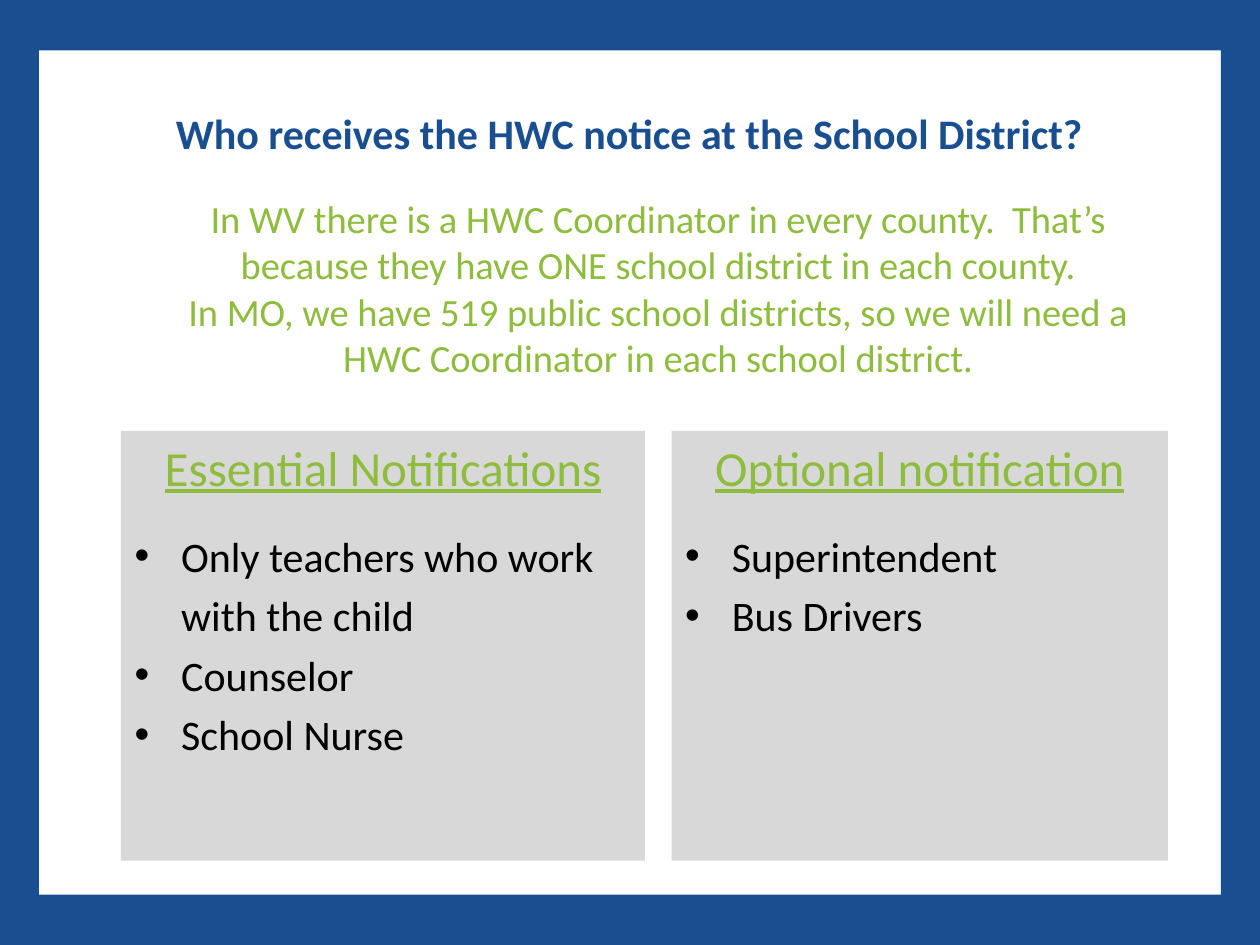
from lxml import etree
from pptx import Presentation
from pptx.dml.color import RGBColor
from pptx.enum.shapes import MSO_SHAPE as Shape
from pptx.enum.text import MSO_ANCHOR as Anchor, PP_ALIGN as Align
from pptx.oxml.ns import qn
from pptx.util import Inches, Pt

BLUE, GREEN, GRAY, BLACK = "194F90", "8EBC3D", "D8D8D8", "000000"
FONT = "Calibri"
WIDTH, HEIGHT = 10, 7.5
BAR, SIDE_BAR = 0.4, 0.31
BULLET_INDENT, HANGING = 0.38, 0.37


def color(value):
    return RGBColor.from_string(value)


def add_rectangle(slide, left, top, width, height, fill):
    shape = slide.shapes.add_shape(
        Shape.RECTANGLE, Inches(left), Inches(top), Inches(width), Inches(height))
    shape.shadow.inherit = False
    shape.fill.solid()
    shape.fill.fore_color.rgb = color(fill)
    shape.line.fill.background()
    return shape


def add_paragraph(frame, text, size, fill, align=Align.LEFT, bold=False,
                  underline=False, before=0, indent=0, bullet=False):
    """Fill the first paragraph of the frame, or append one."""
    paragraph = frame.paragraphs[0]
    if paragraph.runs:
        paragraph = frame.add_paragraph()
    paragraph.alignment = align
    if before:
        paragraph.space_before = Pt(before)
    properties = paragraph._p.get_or_add_pPr()
    properties.set("marL", str(Inches(indent)))
    properties.set("indent", str(-Inches(HANGING) if bullet else 0))
    if bullet:
        etree.SubElement(properties, qn("a:buFont")).set("typeface", "Arial")
        etree.SubElement(properties, qn("a:buChar")).set("char", "•")
    run = paragraph.add_run()
    run.text = text
    font = run.font
    font.name, font.size = FONT, Pt(size)
    font.bold, font.underline = bold, underline
    font.color.rgb = color(fill)


def add_text(slide, left, top, width, height, lines, anchor=Anchor.TOP,
             bottom_inset=0.05, **text_format):
    box = slide.shapes.add_textbox(
        Inches(left), Inches(top), Inches(width), Inches(height))
    frame = box.text_frame
    frame.word_wrap = True
    frame.vertical_anchor = anchor
    frame.margin_bottom = Inches(bottom_inset)
    for line in lines:
        add_paragraph(frame, line, align=Align.CENTER, **text_format)


def add_panel(slide, left, top, width, height, heading, items):
    """Gray panel: an underlined heading over bullets, each a list of lines."""
    frame = add_rectangle(slide, left, top, width, height, GRAY).text_frame
    frame.word_wrap = True
    frame.vertical_anchor = Anchor.TOP
    add_paragraph(frame, heading, 28, GREEN, align=Align.CENTER, underline=True)
    for item_number, lines in enumerate(items):
        for line_number, line in enumerate(lines):
            first = item_number == line_number == 0
            add_paragraph(frame, line, 24, BLACK, before=19.6 if first else 5.2,
                          indent=BULLET_INDENT, bullet=line_number == 0)


def add_frame(slide, left, top, width, height):
    """Blue border along the four edges."""
    for bar_top in (top, top + height - BAR):
        add_rectangle(slide, left, bar_top, width, BAR, BLUE)
    for bar_left in (left, left + width - SIDE_BAR):
        add_rectangle(slide, bar_left, top, SIDE_BAR, height, BLUE)


def main():
    presentation = Presentation()
    presentation.slide_width = Inches(WIDTH)
    presentation.slide_height = Inches(HEIGHT)
    slide = presentation.slides.add_slide(presentation.slide_layouts[6])

    # Title
    add_text(slide, 0.83, 0.75, 8.33, 1,
             ["Who receives the HWC notice at the School District?"],
             anchor=Anchor.MIDDLE, bottom_inset=0.45,
             size=24, fill=BLUE, bold=True)

    # Notification panels
    add_panel(slide, 0.96, 3.42, 4.16, 3.41, "Essential Notifications",
              [["Only teachers who work", "with the child"],
               ["Counselor"], ["School Nurse"]])
    add_panel(slide, 5.33, 3.42, 3.94, 3.41, "Optional notification",
              [["Superintendent"], ["Bus Drivers"]])

    # Introduction
    add_text(slide, 1.26, 1.5, 7.93, 1.58,
             ["In WV there is a HWC Coordinator in every county.  That’s because "
              "they have ONE school district in each county.",
              "In MO, we have 519 public school districts, so we will need a "
              "HWC Coordinator in each school district."],
             size=22, fill=GREEN)

    # Border
    add_frame(slide, 0, 0, WIDTH, HEIGHT)
    presentation.save("out.pptx")


if __name__ == "__main__":
    main()
